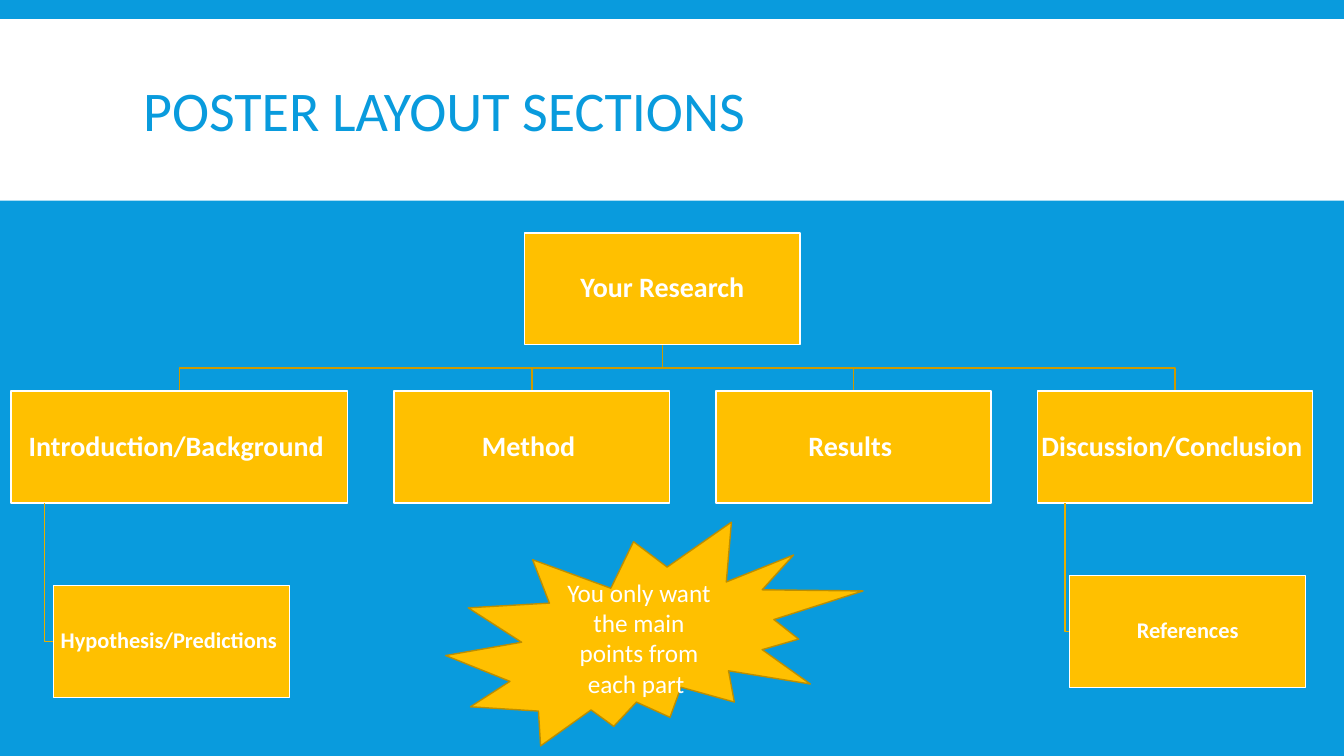
from pptx import Presentation
from pptx.dml.color import RGBColor
from pptx.enum.shapes import MSO_SHAPE
from pptx.enum.text import MSO_ANCHOR, MSO_AUTO_SIZE, PP_ALIGN
from pptx.util import Inches, Pt

BLUE = RGBColor(0x09, 0x9B, 0xDD)
WHITE = RGBColor(0xFF, 0xFF, 0xFF)
GOLD = RGBColor(0xFF, 0xC0, 0x00)
BRANCH = RGBColor(0xCC, 0x9A, 0x00)
TWIG = RGBColor(0xE7, 0xAE, 0x00)
SEAL_EDGE = RGBColor(0xBD, 0x8E, 0x00)

BOX_W, BOX_H, SUB_W, GAP = 2.73, 1.11, 2.34, 0.46
SECTIONS = [
    ("Introduction/Background ", 3.34, ("Hypothesis/Predictions ", 0.42, 1.93)),
    ("Method ", BOX_W, None),
    ("Results ", BOX_W, None),
    ("Discussion/Conclusion ", BOX_W, ("References", 0.32, 1.83)),
]


def add_text(tf, text, size, color, align, bold=False, spacing=None):
    tf.word_wrap = True
    tf.vertical_anchor = MSO_ANCHOR.MIDDLE
    p = tf.paragraphs[0]
    p.alignment = align
    p.line_spacing = spacing
    r = p.add_run()
    r.text = text
    r.font.name = "Calibri"
    r.font.size = Pt(size)
    r.font.bold = bold
    r.font.color.rgb = color


def add_filled(s, kind, x, y, w, h, fill, line=None):
    sp = s.shapes.add_shape(kind, Inches(x), Inches(y), Inches(w), Inches(h))
    sp.shadow.inherit = False
    sp.fill.solid()
    sp.fill.fore_color.rgb = fill
    if line is None:
        sp.line.fill.background()
    else:
        sp.line.color.rgb = line
        sp.line.width = Pt(1)
    return sp


def add_box(s, text, x, y, w, size):
    sp = add_filled(s, MSO_SHAPE.RECTANGLE, x, y, w, BOX_H, GOLD, WHITE)
    tf = sp.text_frame
    tf.margin_left = tf.margin_right = tf.margin_top = tf.margin_bottom = Inches(0.01)
    add_text(tf, text, size, WHITE, PP_ALIGN.CENTER, bold=True, spacing=0.9)


def add_path(s, points, color):
    points = [(Inches(x), Inches(y)) for x, y in points]
    fb = s.shapes.build_freeform(*points[0])
    fb.add_line_segments(points[1:], close=False)
    sp = fb.convert_to_shape()
    sp.shadow.inherit = False
    sp.fill.background()
    sp.line.color.rgb = color
    sp.line.width = Pt(1)


def add_header(s, x, y, w, h):
    add_filled(s, MSO_SHAPE.RECTANGLE, x, y, w, h, WHITE)
    title = s.shapes.title
    title.left, title.top = Inches(x + 1.32), Inches(y + 0.12)
    title.width, title.height = Inches(10.7), Inches(1.65)
    s.shapes._spTree.append(title._element)
    tf = title.text_frame
    tf.auto_size = MSO_AUTO_SIZE.NONE
    add_text(tf, "POSTER LAYOUT SECTIONS", 40, BLUE, PP_ALIGN.LEFT, spacing=0.85)


def add_org_chart(s, x, y, w):
    root_x = x + (w - BOX_W) / 2
    root_mid, root_bottom = x + w / 2, y + BOX_H
    row_y = root_bottom + GAP
    bus_y = root_bottom + GAP / 2
    row_bottom = row_y + BOX_H
    left = x
    for name, width, sub in SECTIONS:
        mid = left + width / 2
        add_path(s, [(root_mid, root_bottom), (root_mid, bus_y),
                     (mid, bus_y), (mid, row_y)], BRANCH)
        add_box(s, name, left, row_y, width, 20)
        if sub:
            label, dx, dy = sub
            stem, sub_mid = left + width / 10, row_y + dy + BOX_H / 2
            add_path(s, [(stem, row_bottom), (stem, sub_mid), (left + dx, sub_mid)], TWIG)
            add_box(s, label, left + dx, row_y + dy, SUB_W, 16)
        left += width + GAP
    add_box(s, "Your Research", root_x, y, BOX_W, 20)


def add_callout(s, x, y, w, h):
    sp = add_filled(s, MSO_SHAPE.EXPLOSION2, x, y, w, h, GOLD, SEAL_EDGE)
    add_text(sp.text_frame, "You only want the main points from each part ",
             18, WHITE, PP_ALIGN.CENTER)


def main():
    prs = Presentation()
    prs.slide_width, prs.slide_height = Inches(13.33), Inches(7.5)
    s = prs.slides.add_slide(prs.slide_layouts[5])
    s.background.fill.solid()
    s.background.fill.fore_color.rgb = BLUE
    add_header(s, 0, 0.19, 13.33, 1.8)
    add_org_chart(s, 0.11, 2.31, 12.92)
    add_callout(s, 4.42, 5.18, 4.14, 2.22)
    prs.save("out.pptx")


if __name__ == "__main__":
    main()
